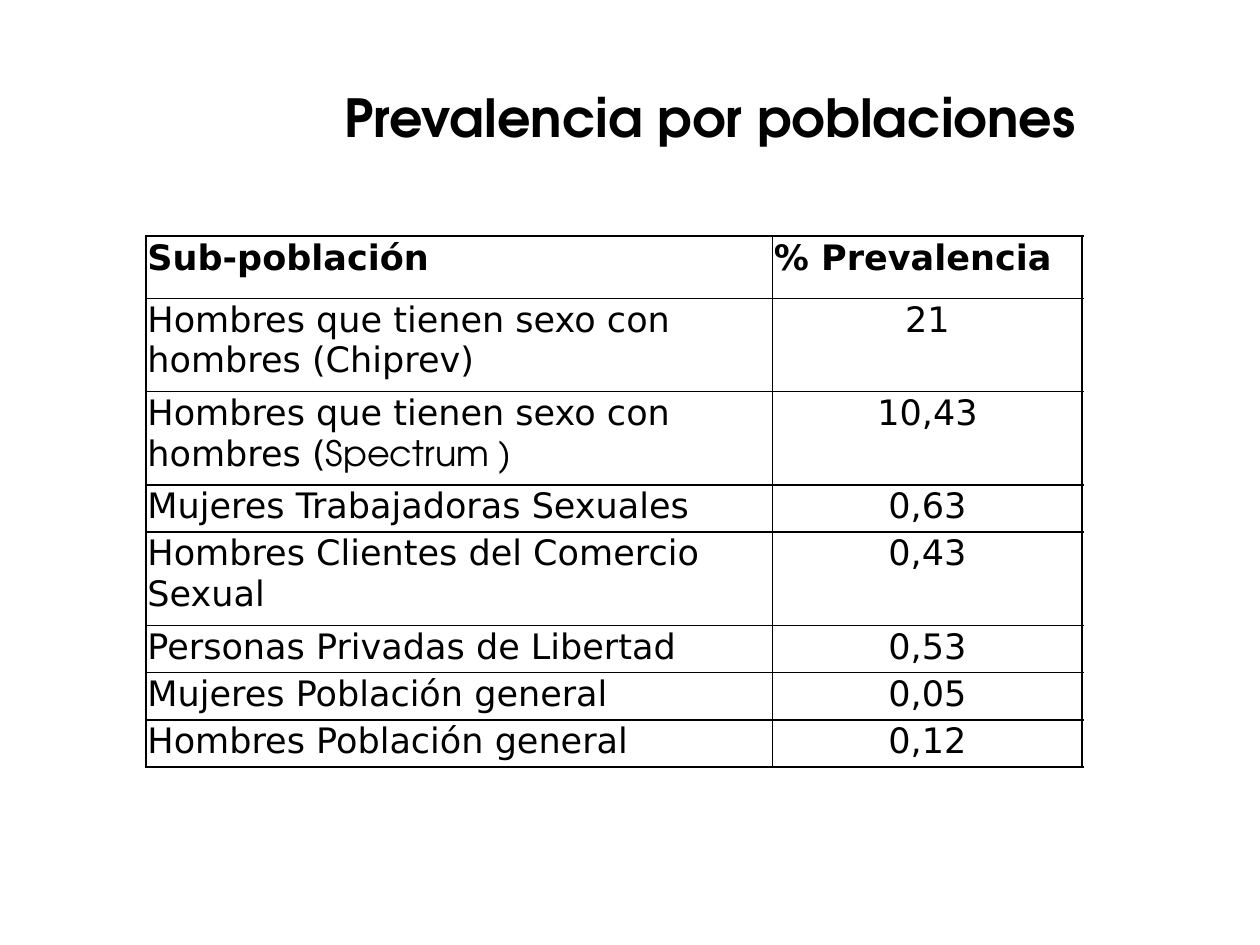
import pptx
import pptx.dml.color
import pptx.enum.text
import pptx.oxml.ns
import pptx.util
from dataclasses import dataclass
from lxml import etree

Pt = pptx.util.Pt
ALIGN = pptx.enum.text.PP_ALIGN


@dataclass(frozen=True)
class Theme:
    ink: str = "000000"
    heading_font: str = "TeX Gyre Adventor"
    body_font: str = "DejaVu Sans"
    title_size: float = 30
    table_size: float = 20
    outer_line: float = 1.5
    inner_line: float = 1


theme = Theme()


def style_run(run, font, size, bold=False):
    run.font.name = font
    run.font.size = Pt(size)
    run.font.bold = bold
    run.font.color.rgb = pptx.dml.color.RGBColor.from_string(theme.ink)


def add_borders(cell, widths):
    """Draw the cell's borders; widths in points: left, right, top, bottom."""
    properties = cell._tc.get_or_add_tcPr()
    qn = pptx.oxml.ns.qn
    for side, width in zip("LRTB", widths):
        line = etree.SubElement(properties, qn(f"a:ln{side}"), w=str(Pt(width)))
        fill = etree.SubElement(line, qn("a:solidFill"))
        etree.SubElement(fill, qn("a:srgbClr"), val=theme.ink)


presentation = pptx.Presentation()
presentation.slide_width, presentation.slide_height = Pt(720), Pt(540)
slide = presentation.slides.add_slide(presentation.slide_layouts[5])

title = slide.shapes.title
title.left, title.top, title.width, title.height = Pt(127.5), Pt(21.6), Pt(556.5), Pt(90)
title.text_frame.text = "Prevalencia por poblaciones"
title.text_frame.vertical_anchor = pptx.enum.text.MSO_ANCHOR.MIDDLE
title_line = title.text_frame.paragraphs[0]
title_line.alignment = ALIGN.CENTER
style_run(title_line.runs[0], theme.heading_font, theme.title_size, bold=True)

# Each row: population, part of its name in the heading font, prevalence
prevalences = [
    ("Sub-población", "", "% Prevalencia"),
    ("Hombres que tienen sexo con hombres (Chiprev)", "", "21"),
    ("Hombres que tienen sexo con hombres (", "Spectrum )", "10,43"),
    ("Mujeres Trabajadoras Sexuales", "", "0,63"),
    ("Hombres Clientes del Comercio Sexual", "", "0,43"),
    ("Personas Privadas de Libertad", "", "0,53"),
    ("Mujeres Población general", "", "0,05"),
    ("Hombres Población general", "", "0,12"),
]
header_height, one_line, two_lines = 35.5, 27, 53.3
row_heights = [header_height, two_lines, two_lines, one_line, two_lines,
               one_line, one_line, one_line]
column_widths = [358, 177]

table = slide.shapes.add_table(
    len(prevalences), len(column_widths), Pt(83.5), Pt(135),
    Pt(sum(column_widths)), Pt(sum(row_heights))).table
table.first_row = False
table.horz_banding = False
for column, width in zip(table.columns, column_widths):
    column.width = Pt(width)

for row_index, (population, name_end, prevalence) in enumerate(prevalences):
    table.rows[row_index].height = Pt(row_heights[row_index])
    is_header = row_index == 0
    for column_index, text in enumerate((population, prevalence)):
        cell = table.cell(row_index, column_index)
        cell.margin_left = cell.margin_right = cell.margin_top = Pt(0.75)
        cell.margin_bottom = Pt(0)
        add_borders(cell, (
            theme.outer_line if column_index == 0 else theme.inner_line,
            theme.outer_line if column_index == 1 else theme.inner_line,
            theme.outer_line if is_header else theme.inner_line,
            theme.inner_line))
        cell.fill.background()
        cell.text_frame.text = text
        paragraph = cell.text_frame.paragraphs[0]
        centred = column_index == 1 and not is_header
        paragraph.alignment = ALIGN.CENTER if centred else ALIGN.LEFT
        style_run(paragraph.runs[0], theme.body_font, theme.table_size, bold=is_header)
        if name_end and column_index == 0:
            ending = paragraph.add_run()
            ending.text = name_end
            style_run(ending, theme.heading_font, theme.table_size)

presentation.save("out.pptx")
